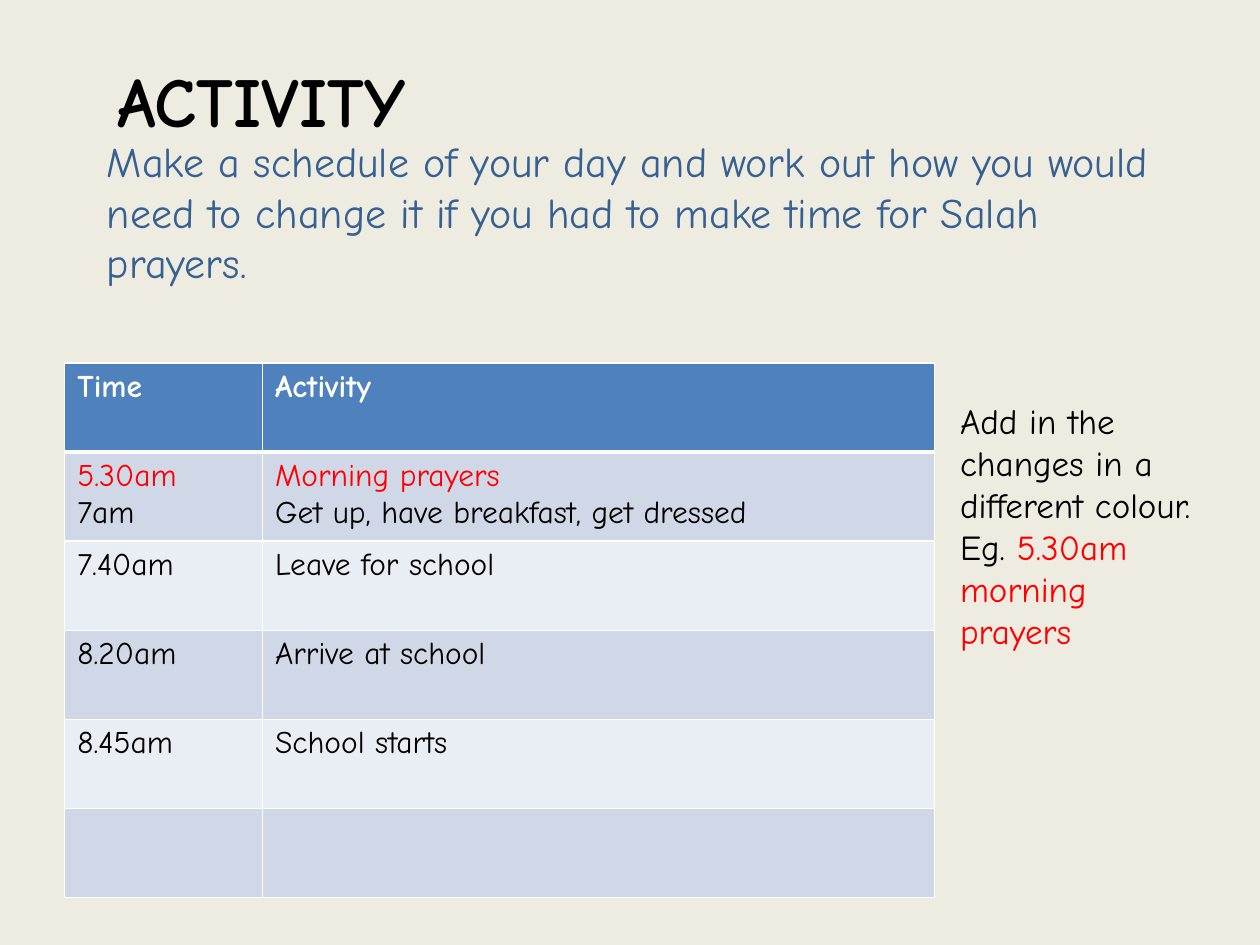
from dataclasses import dataclass

from lxml import etree
from pptx import Presentation
from pptx.dml.color import RGBColor
from pptx.enum import text
from pptx.oxml import ns
from pptx.util import Pt


@dataclass(frozen=True)
class Theme:
    font: str = "Comic Neue"
    background: str = "EEECE1"
    ink: str = "000000"
    change: str = "FF0000"
    task: str = "376092"
    light: str = "FFFFFF"
    header: str = "4F81BD"
    bands: tuple[str, str] = ("D0D8E8", "E9EDF4")
    title_size: float = 40
    task_size: float = 24
    note_size: float = 20
    table_size: float = 18


@dataclass(frozen=True)
class Run:
    text: str
    color: str


@dataclass(frozen=True)
class TextBox:
    left: float
    top: float
    width: float
    height: float
    size: float
    paragraphs: list[list[Run]]
    bold: bool = False
    anchor: text.MSO_ANCHOR = text.MSO_ANCHOR.TOP
    inset_top: float = 3.6
    inset_bottom: float = 3.6


THEME = Theme()

BOXES = [
    TextBox(60, 26, 612, 81, THEME.title_size,
            [[Run("ACTIVITY", THEME.ink)]], bold=True, inset_top=7),
    TextBox(54, 128, 612, 90, THEME.task_size,
            [[Run("Make a schedule of your day and work out how you would need "
                  "to change it if you had to make time for Salah prayers.",
                  THEME.task)]],
            anchor=text.MSO_ANCHOR.BOTTOM, inset_bottom=54),
    TextBox(541.5, 224.5, 147.5, 177, THEME.note_size,
            [[Run("Add in the changes in a different colour.", THEME.ink)],
             [Run("Eg. ", THEME.ink),
              Run("5.30am morning prayers", THEME.change)]]),
]

TABLE_LEFT, TABLE_TOP, ROW_HEIGHT = 37, 207.5, 50.9
COLUMN_WIDTHS = (113, 384)
HEADINGS = ("Time", "Activity")
# Each row holds (time, activity, is a change) entries.
SCHEDULE = [
    [("5.30am", "Morning prayers", True),
     ("7am", "Get up, have breakfast, get dressed", False)],
    [("7.40am", "Leave for school", False)],
    [("8.20am", "Arrive at school", False)],
    [("8.45am", "School starts", False)],
    [],
]


def write_paragraphs(frame, paragraphs: list[list[Run]], size: float,
                     bold: bool = False) -> None:
    for index, runs in enumerate(paragraphs):
        paragraph = frame.add_paragraph() if index else frame.paragraphs[0]
        paragraph.font.name = THEME.font
        paragraph.font.size = Pt(size)
        paragraph.font.bold = bold
        for item in runs:
            run = paragraph.add_run()
            run.text = item.text
            run.font.color.rgb = RGBColor.from_string(item.color)


def add_text_box(slide, box: TextBox) -> None:
    shape = slide.shapes.add_textbox(
        Pt(box.left), Pt(box.top), Pt(box.width), Pt(box.height))
    frame = shape.text_frame
    frame.word_wrap = True
    frame.vertical_anchor = box.anchor
    frame.margin_top = Pt(box.inset_top)
    frame.margin_bottom = Pt(box.inset_bottom)
    write_paragraphs(frame, box.paragraphs, box.size, box.bold)


def set_borders(cell, top: float, bottom: float) -> None:
    properties = cell._tc.get_or_add_tcPr()
    for tag, width in (("lnL", 1), ("lnR", 1), ("lnT", top), ("lnB", bottom)):
        line = etree.SubElement(properties, ns.qn(f"a:{tag}"), w=str(Pt(width)))
        fill = etree.SubElement(line, ns.qn("a:solidFill"))
        etree.SubElement(fill, ns.qn("a:srgbClr"), val=THEME.light)


def fill_cell(cell, paragraphs: list[list[Run]], row: int) -> None:
    is_header = row == 0
    set_borders(cell, top=3 if row == 1 else 1, bottom=3 if is_header else 1)
    color = THEME.header if is_header else THEME.bands[(row - 1) % 2]
    cell.fill.solid()
    cell.fill.fore_color.rgb = RGBColor.from_string(color)
    write_paragraphs(cell.text_frame, paragraphs or [[]], THEME.table_size,
                     bold=is_header)


def add_schedule(slide) -> None:
    row_count = len(SCHEDULE) + 1
    table = slide.shapes.add_table(
        row_count, len(COLUMN_WIDTHS), Pt(TABLE_LEFT), Pt(TABLE_TOP),
        Pt(sum(COLUMN_WIDTHS)), Pt(ROW_HEIGHT * row_count)).table
    for row in table.rows:
        row.height = Pt(ROW_HEIGHT)
    for column, width in enumerate(COLUMN_WIDTHS):
        table.columns[column].width = Pt(width)
        fill_cell(table.cell(0, column),
                  [[Run(HEADINGS[column], THEME.light)]], 0)
        for row, entries in enumerate(SCHEDULE, start=1):
            paragraphs = [
                [Run(entry[column], THEME.change if entry[2] else THEME.ink)]
                for entry in entries]
            fill_cell(table.cell(row, column), paragraphs, row)


def main() -> None:
    presentation = Presentation()
    presentation.slide_width, presentation.slide_height = Pt(720), Pt(540)
    slide = presentation.slides.add_slide(presentation.slide_layouts[6])
    slide.background.fill.solid()
    slide.background.fill.fore_color.rgb = RGBColor.from_string(THEME.background)
    title, task, note = BOXES
    add_text_box(slide, title)
    add_text_box(slide, task)
    add_schedule(slide)
    add_text_box(slide, note)
    presentation.save("out.pptx")


if __name__ == "__main__":
    main()
